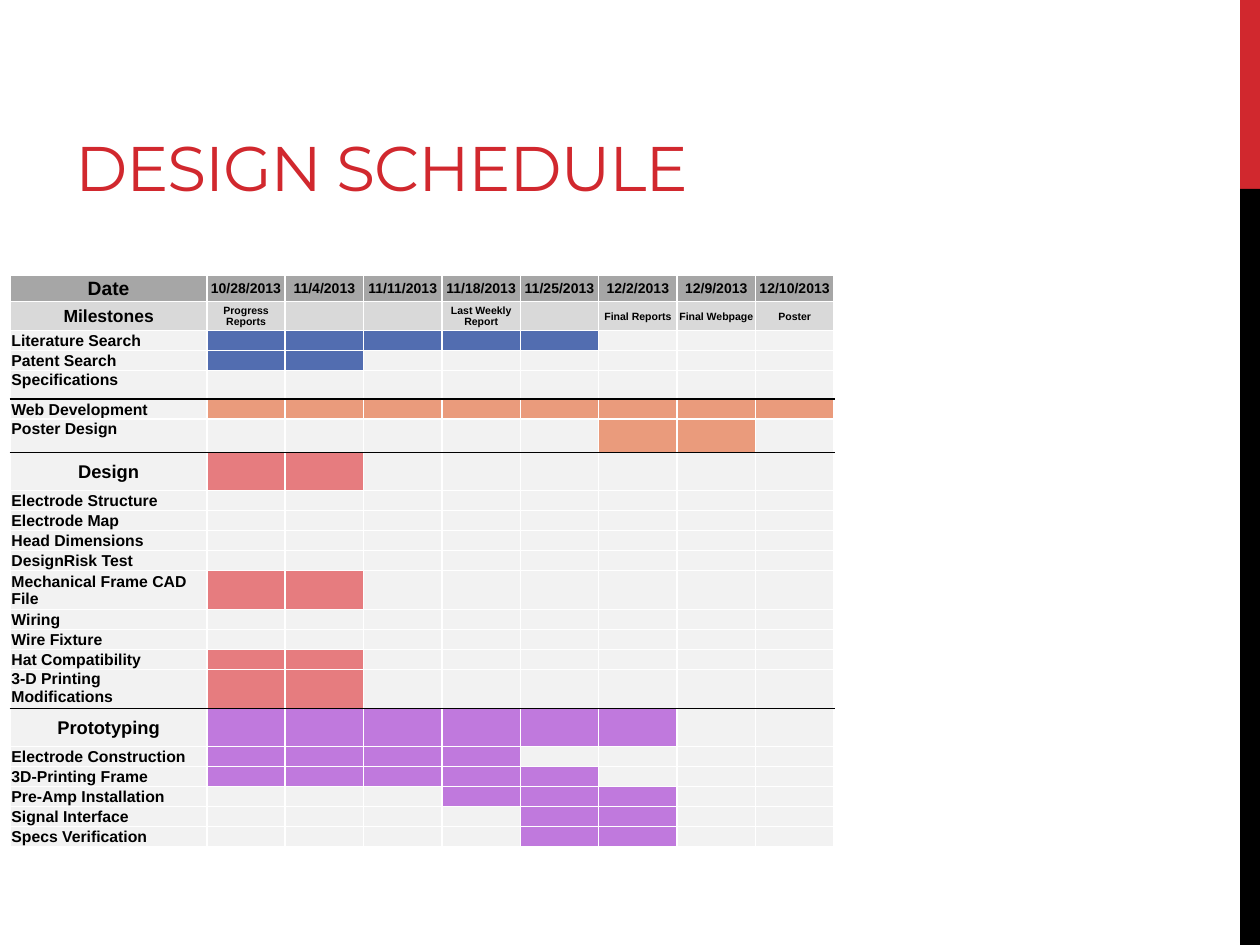
"""Build the design schedule slide with its Gantt table."""
from dataclasses import dataclass

from lxml.etree import SubElement
from pptx import Presentation
from pptx.dml.color import RGBColor
from pptx.enum.shapes import MSO_SHAPE
from pptx.enum.text import MSO_ANCHOR, PP_ALIGN
from pptx.oxml.ns import qn
from pptx.util import Cm, Pt


@dataclass(frozen=True)
class Theme:
    red: str = "D1282E"
    black: str = "000000"
    white: str = "FFFFFF"
    header: str = "A6A6A6"
    milestone: str = "D9D9D9"
    empty: str = "F2F2F2"
    research: str = "526DB0"
    media: str = "EA9B7C"
    design: str = "E67C7F"
    prototype: str = "C079DD"
    title_font: str = "Montserrat"
    table_font: str = "Arial"
    title_size: float = 36
    corner_size: float = 11
    section_size: float = 10.5
    milestones_size: float = 10
    task_size: float = 9
    date_size: float = 8
    note_size: float = 6
    border_width: float = 1


THEME = Theme()
DATES = ["10/28/2013", "11/4/2013", "11/11/2013", "11/18/2013",
         "11/25/2013", "12/2/2013", "12/9/2013", "12/10/2013"]
MILESTONES = ["Progress Reports", "", "", "Last Weekly Report", "",
              "Final Reports", "Final Webpage", "Poster"]
LABEL_WIDTH, DATE_WIDTH = 3.96, 1.58
HEADER_HEIGHT, MILESTONE_HEIGHT = 0.53, 0.58
TASK_HEIGHT, SECTION_HEIGHT = 0.39, 0.77

# Each task: label, first and last busy week (0 for none), kind, height
GROUPS = [
    (THEME.research, [
        ("Literature Search", 1, 5, "task", TASK_HEIGHT),
        ("Patent Search", 1, 2, "task", TASK_HEIGHT),
        ("Specifications", 0, 0, "closing", 0.58),
    ]),
    (THEME.media, [
        ("Web Development", 1, 8, "task", TASK_HEIGHT),
        ("Poster Design", 6, 7, "closing", 0.67),
    ]),
    (THEME.design, [
        ("Design", 1, 2, "section", SECTION_HEIGHT),
        ("Electrode Structure", 0, 0, "task", TASK_HEIGHT),
        ("Electrode Map", 0, 0, "task", TASK_HEIGHT),
        ("Head Dimensions", 0, 0, "task", TASK_HEIGHT),
        ("DesignRisk Test", 0, 0, "task", TASK_HEIGHT),
        ("Mechanical Frame CAD File", 1, 2, "task", 0.72),
        ("Wiring", 0, 0, "task", TASK_HEIGHT),
        ("Wire Fixture", 0, 0, "task", TASK_HEIGHT),
        ("Hat Compatibility", 1, 2, "task", TASK_HEIGHT),
        ("3-D Printing Modifications", 1, 2, "closing", 0.58),
    ]),
    (THEME.prototype, [
        ("Prototyping", 1, 6, "section", SECTION_HEIGHT),
        ("Electrode Construction", 1, 4, "task", TASK_HEIGHT),
        ("3D-Printing Frame", 1, 5, "task", TASK_HEIGHT),
        ("Pre-Amp Installation", 4, 6, "task", TASK_HEIGHT),
        ("Signal Interface", 5, 6, "task", TASK_HEIGHT),
        ("Specs Verification", 5, 6, "task", TASK_HEIGHT),
    ]),
]


def apply_format(target, values):
    """Set every attribute named in a dict of format values."""
    for name, value in values.items():
        setattr(target, name, value)


def format_run(run, font, size, color, bold):
    """Set the typeface, size, weight and colour of a run."""
    apply_format(run.font, {"name": font, "size": Pt(size), "bold": bold})
    run.font.color.rgb = RGBColor.from_string(color)


def add_band(slide, left, top, width, height, color):
    """Add a plain filled rectangle."""
    shape = slide.shapes.add_shape(
        MSO_SHAPE.RECTANGLE, Cm(left), Cm(top), Cm(width), Cm(height))
    shape.shadow.inherit = False
    shape.fill.solid()
    shape.fill.fore_color.rgb = RGBColor.from_string(color)
    shape.line.fill.background()


def add_title(slide, text):
    """Add the slide title, resting on the bottom of its box."""
    shape = slide.shapes.add_textbox(Cm(1.27), Cm(0.43), Cm(16.08), Cm(3.81))
    apply_format(shape.text_frame, {
        "word_wrap": True, "vertical_anchor": MSO_ANCHOR.BOTTOM})
    run = shape.text_frame.paragraphs[0].add_run()
    run.text = text
    format_run(run, THEME.title_font, THEME.title_size, THEME.red, False)
    run.font._element.set("spc", "-60")


def set_borders(cell, top, bottom):
    """Draw white side borders and the given top and bottom borders."""
    properties = cell._tc.get_or_add_tcPr()
    sides = {"L": THEME.white, "R": THEME.white, "T": top, "B": bottom}
    for side, color in sides.items():
        line = SubElement(properties, qn(f"a:ln{side}"),
                          w=str(Pt(THEME.border_width)))
        fill = SubElement(line, qn("a:solidFill"))
        SubElement(fill, qn("a:srgbClr"), val=color)


def fill_cell(cell, text, size, color, centered=True, at_top=False,
              top=THEME.white, bottom=THEME.white):
    """Give a cell its borders, fill and bold text."""
    apply_format(cell, {
        "margin_left": Cm(0.02), "margin_right": Cm(0.02),
        "margin_top": Cm(0.02), "margin_bottom": Cm(0),
        "vertical_anchor": MSO_ANCHOR.TOP if at_top else MSO_ANCHOR.MIDDLE})
    set_borders(cell, top, bottom)
    cell.fill.solid()
    cell.fill.fore_color.rgb = RGBColor.from_string(color)
    paragraph = cell.text_frame.paragraphs[0]
    paragraph.alignment = PP_ALIGN.CENTER if centered else PP_ALIGN.LEFT
    if text:
        run = paragraph.add_run()
        run.text = text
        format_run(run, THEME.table_font, size, THEME.black, True)
    else:
        SubElement(paragraph._p, qn("a:endParaRPr"), sz=str(int(size * 100)))


def fill_heading(row, label, label_size, texts, size, color):
    """Fill a heading row with its label and one text per date."""
    fill_cell(row.cells[0], label, label_size, color)
    for index, text in enumerate(texts, 1):
        fill_cell(row.cells[index], text, size, color)


def fill_task(row, task, color, opens_group):
    """Fill a task row and colour its busy weeks."""
    label, first, last, kind, _ = task
    borders = {"top": THEME.black if opens_group else THEME.white,
               "bottom": THEME.black if kind == "closing" else THEME.white}
    section = kind == "section"
    fill_cell(row.cells[0], label,
              THEME.section_size if section else THEME.task_size,
              THEME.empty, section, kind == "closing", **borders)
    for week in range(1, len(DATES) + 1):
        busy = first <= week <= last
        fill_cell(row.cells[week], "", THEME.note_size,
                  color if busy else THEME.empty, **borders)


def add_schedule(slide):
    """Add the schedule table with headings and task groups."""
    tasks = [(task, color, position == 0 and group > 0)
             for group, (color, members) in enumerate(GROUPS)
             for position, task in enumerate(members)]
    heights = [HEADER_HEIGHT, MILESTONE_HEIGHT]
    heights += [task[-1] for task, _, _ in tasks]
    widths = [LABEL_WIDTH] + [DATE_WIDTH] * len(DATES)
    table = slide.shapes.add_table(
        len(heights), len(widths), Cm(0.21), Cm(5.55),
        Cm(sum(widths)), Cm(sum(heights))).table
    apply_format(table, {"first_row": False, "horz_banding": False})
    for column, width in zip(table.columns, widths):
        column.width = Cm(width)
    rows = list(table.rows)
    for row, height in zip(rows, heights):
        row.height = Cm(height)
    fill_heading(rows[0], "Date", THEME.corner_size,
                 DATES, THEME.date_size, THEME.header)
    fill_heading(rows[1], "Milestones", THEME.milestones_size,
                 MILESTONES, THEME.note_size, THEME.milestone)
    for row, (task, color, opens_group) in zip(rows[2:], tasks):
        fill_task(row, task, color, opens_group)


def main():
    """Create and save the presentation."""
    presentation = Presentation()
    apply_format(presentation, {"slide_width": Cm(25.4),
                                "slide_height": Cm(19.05)})
    slide = presentation.slides.add_slide(presentation.slide_layouts[6])
    add_band(slide, 25, 0, 0.4, 3.81, THEME.red)
    add_band(slide, 25, 3.81, 0.4, 15.24, THEME.black)
    add_title(slide, "DESIGN SCHEDULE")
    add_schedule(slide)
    presentation.save("out.pptx")


if __name__ == "__main__":
    main()
